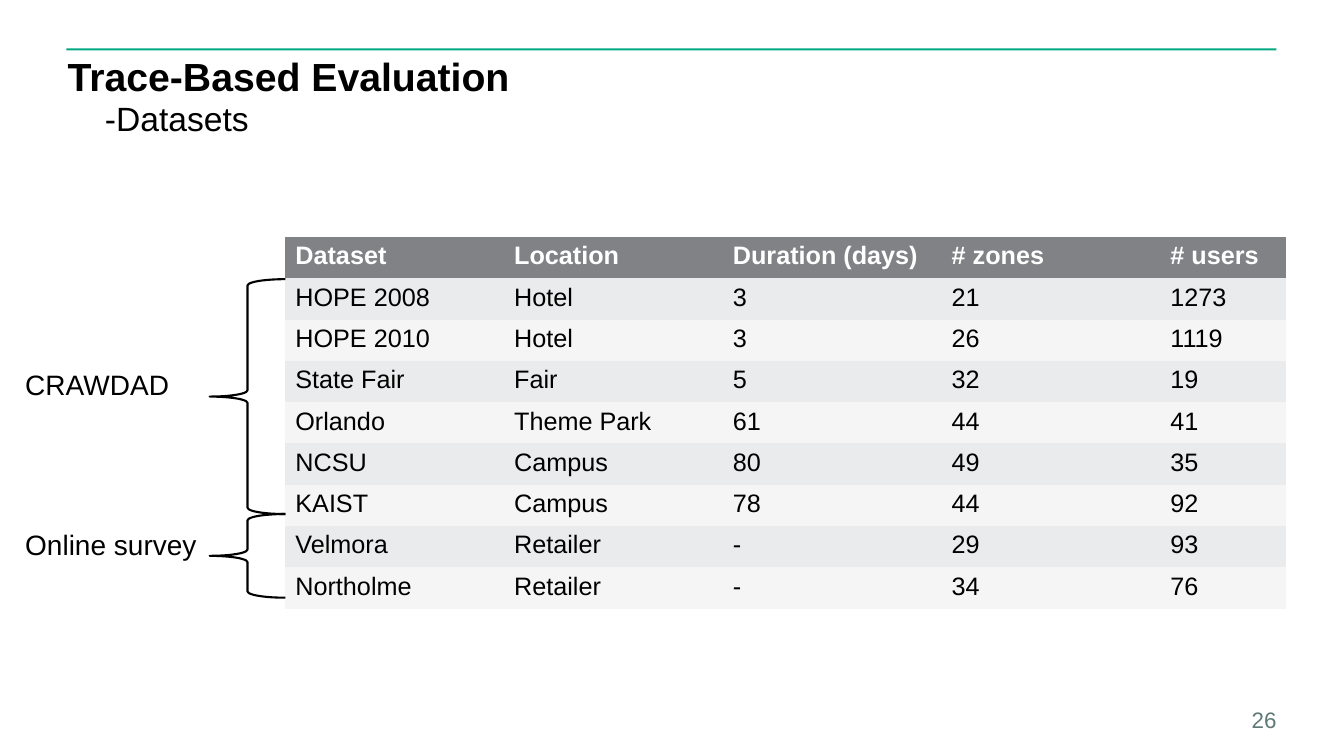
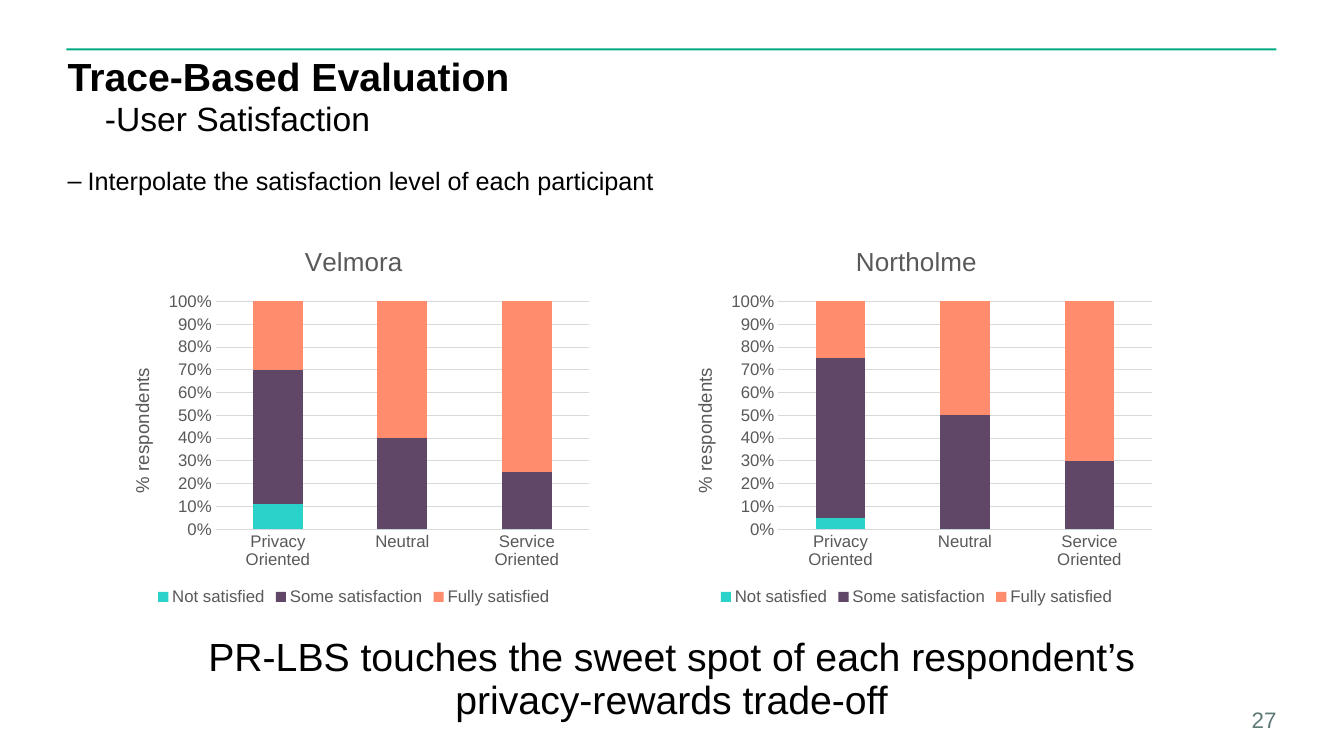
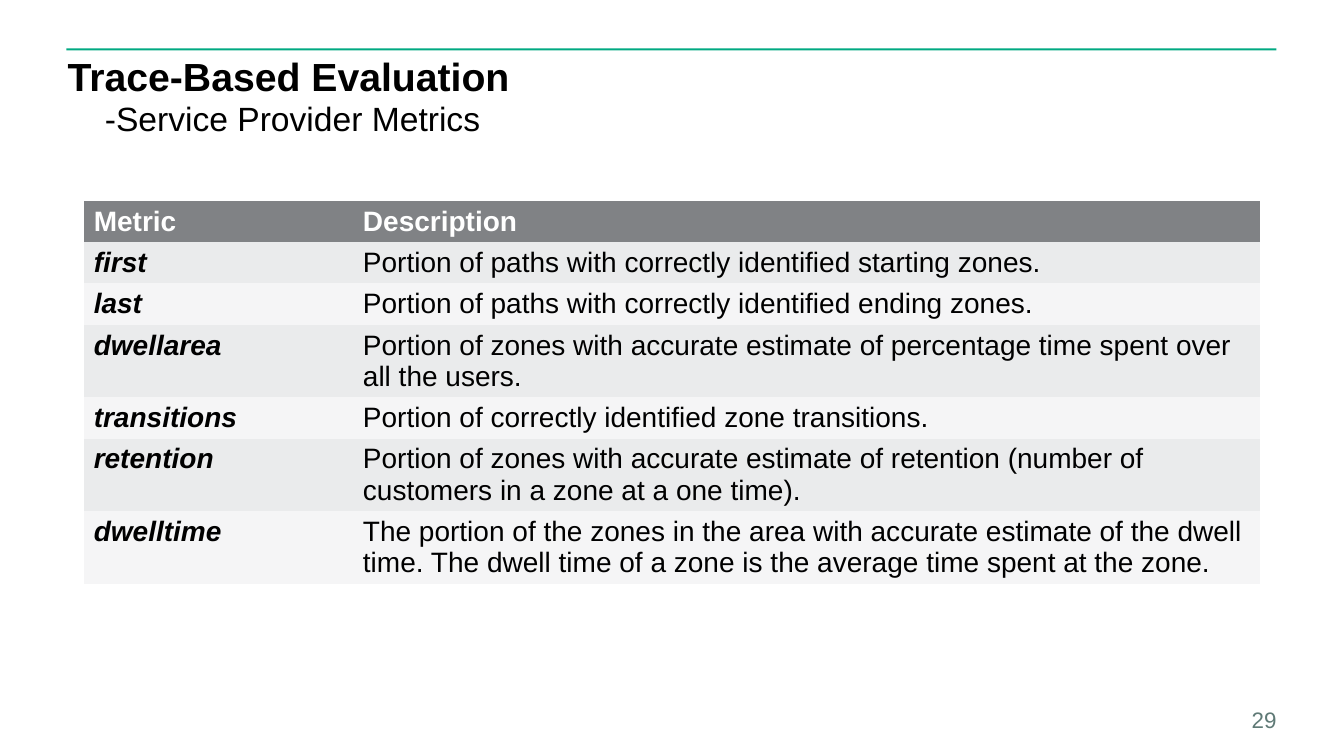
from dataclasses import dataclass

from lxml.etree import SubElement
from pptx import Presentation
from pptx.chart.data import CategoryChartData
from pptx.dml.color import RGBColor
from pptx.enum.chart import XL_CHART_TYPE, XL_LEGEND_POSITION, XL_TICK_MARK
from pptx.enum.shapes import MSO_SHAPE
from pptx.enum.text import MSO_ANCHOR, MSO_AUTO_SIZE, PP_ALIGN
from pptx.oxml.ns import qn
from pptx.util import Inches, Pt


@dataclass(frozen=True)
class Theme:
    font: str = "Arial"
    # Colours
    text: str = "000000"
    inverse: str = "FFFFFF"
    accent: str = "01A982"
    number: str = "5F7A76"
    header: str = "808285"
    bands: tuple = ("EAEBEC", "F5F5F6")
    chart_text: str = "595959"
    grid: str = "D9D9D9"
    series: tuple = ("2AD2C9", "614767", "FF8D6D")
    # Type sizes
    title_size: float = 28
    subtitle_size: float = 24
    label_size: float = 20
    body_size: float = 18
    number_size: float = 16
    chart_title_size: float = 18.6
    axis_title_size: float = 13.3
    chart_size: float = 12


THEME = Theme()
NO_TABLE_STYLE = "{2D5ABB26-0587-4C30-8999-92F81FD0307C}"
SATISFACTION = ("Not satisfied", "Some satisfaction", "Fully satisfied")
ORIENTATIONS = ("Privacy Oriented", "Neutral", "Service Oriented")


# Shared helpers
def rgb(color):
    return RGBColor.from_string(color)


def inches(box):
    return [Inches(v) for v in box]


def style_font(font, size, color, bold=False, italic=False):
    font.name, font.size = THEME.font, Pt(size)
    font.bold, font.italic = bold, italic
    font.color.rgb = rgb(color)


def write(tf, text, size=THEME.body_size, color=THEME.text, bold=False,
          italic=False, align=PP_ALIGN.LEFT, spacing=0.9, before=0,
          bullet=None, margin=0, hanging=0):
    p = tf.paragraphs[0]
    p.alignment, p.line_spacing, p.space_before = align, spacing, Pt(before)
    pPr = p._p.get_or_add_pPr()
    pPr.set("marL", str(Inches(margin)))
    pPr.set("indent", str(-Inches(hanging)))
    if bullet:
        SubElement(pPr, qn("a:buChar")).set("char", bullet)
    else:
        SubElement(pPr, qn("a:buNone"))
    r = p.add_run()
    r.text = text
    style_font(r.font, size, color, bold, italic)


def place_text(sp, box, text, anchor=MSO_ANCHOR.TOP, **fmt):
    sp.left, sp.top, sp.width, sp.height = inches(box)
    tf = sp.text_frame
    tf.word_wrap, tf.auto_size = True, MSO_AUTO_SIZE.NONE
    tf.vertical_anchor = anchor
    tf.margin_left = tf.margin_right = tf.margin_top = tf.margin_bottom = 0
    write(tf, text, **fmt)


def add_text(slide, box, text, **fmt):
    place_text(slide.shapes.add_textbox(*inches(box)), box, text, **fmt)


# Frame common to all slides: rule, title, subtitle, page number
def add_slide(prs, layout, subtitle, number):
    slide = prs.slides.add_slide(prs.slide_layouts.get_by_name(layout))
    rule = slide.shapes.add_shape(MSO_SHAPE.RECTANGLE, *inches((0.66, 0.48, 12, 0.02)))
    rule.shadow.inherit = False
    rule.fill.solid()
    rule.fill.fore_color.rgb = rgb(THEME.accent)
    rule.line.fill.background()
    place_text(slide.shapes.title, (0.67, 0.57, 12, 0.45), "Trace-Based Evaluation",
               size=THEME.title_size, bold=True)
    place_text(slide.placeholders[1], (0.67, 1.02, 12, 0.42), subtitle,
               size=THEME.subtitle_size, margin=0.37)
    add_text(slide, (12.08, 7.03, 0.58, 0.25), str(number), size=THEME.number_size,
             color=THEME.number, align=PP_ALIGN.RIGHT, anchor=MSO_ANCHOR.BOTTOM)
    return slide


def add_banded_table(slide, left, top, widths, rows, size, row_height=0.41,
                     emphasize_first=False):
    box = (left, top, sum(widths), row_height * len(rows))
    frame = slide.shapes.add_table(len(rows), len(widths), *inches(box))
    table = frame.table
    table._tbl.tblPr.find(qn("a:tableStyleId")).text = NO_TABLE_STYLE
    for column, width in zip(table.columns, widths):
        column.width = Inches(width)
    for i, row in enumerate(rows):
        is_header = i == 0
        for j, text in enumerate(row):
            cell = table.cell(i, j)
            cell.fill.solid()
            cell.fill.fore_color.rgb = rgb(
                THEME.header if is_header else THEME.bands[(i - 1) % 2])
            key = emphasize_first and j == 0 and not is_header
            write(cell.text_frame, text, size=size, spacing=1.0,
                  color=THEME.inverse if is_header else THEME.text,
                  bold=is_header or key, italic=key)


def add_source_group(slide, top, height, label, label_top):
    brace = slide.shapes.add_shape(MSO_SHAPE.LEFT_BRACE, *inches((2.08, top, 0.75, height)))
    brace.shadow.inherit = False
    brace.fill.background()
    brace.line.color.rgb = rgb(THEME.text)
    brace.line.width = Pt(1.5)
    add_text(slide, (0.25, label_top, 1.83, 0.5), label, size=THEME.label_size)


def set_chart_title(tf, text, size):
    tf.text = text
    style_font(tf.paragraphs[0].runs[0].font, size, THEME.chart_text)


def add_satisfaction_chart(slide, box, title, values):
    data = CategoryChartData()
    data.categories = ORIENTATIONS
    for name, vals in zip(SATISFACTION, values):
        data.add_series(name, vals)
    chart = slide.shapes.add_chart(
        XL_CHART_TYPE.COLUMN_STACKED_100, *inches(box), data).chart
    style_font(chart.font, THEME.chart_size, THEME.chart_text)
    chart.has_title = True
    set_chart_title(chart.chart_title.text_frame, title, THEME.chart_title_size)
    chart.chart_title.include_in_layout = False

    # Columns
    plot = chart.plots[0]
    plot.gap_width, plot.overlap, plot.vary_by_categories = 150, 100, False
    for series, color in zip(plot.series, THEME.series):
        series.format.fill.solid()
        series.format.fill.fore_color.rgb = rgb(color)

    # Axes
    cat, val = chart.category_axis, chart.value_axis
    for axis in (cat, val):
        axis.major_tick_mark = axis.minor_tick_mark = XL_TICK_MARK.NONE
        style_font(axis.tick_labels.font, THEME.chart_size, THEME.chart_text)
    val.tick_labels.number_format = "0%"
    val.tick_labels.number_format_is_linked = False
    val.format.line.fill.background()
    val.has_major_gridlines = True
    for line in (cat.format.line, val.major_gridlines.format.line):
        line.color.rgb = rgb(THEME.grid)
        line.width = Pt(0.75)
    val.has_title = True
    set_chart_title(val.axis_title.text_frame, "% respondents", THEME.axis_title_size)

    # Legend
    chart.has_legend = True
    chart.legend.position = XL_LEGEND_POSITION.BOTTOM
    chart.legend.include_in_layout = False
    style_font(chart.legend.font, THEME.chart_size, THEME.chart_text)


# Slides
def datasets_slide(prs):
    slide = add_slide(prs, "Title and Content", "-Datasets", 26)
    rows = (
        ("Dataset", "Location", "Duration (days)", "# zones", "# users"),
        ("HOPE 2008", "Hotel", "3", "21", "1273"),
        ("HOPE 2010", "Hotel", "3", "26", "1119"),
        ("State Fair", "Fair", "5", "32", "19"),
        ("Orlando", "Theme Park", "61", "44", "41"),
        ("NCSU", "Campus", "80", "49", "35"),
        ("KAIST", "Campus", "78", "44", "92"),
        ("Velmora", "Retailer", "-", "29", "93"),
        ("Northolme", "Retailer", "-", "34", "76"),
    )
    add_banded_table(slide, 2.83, 2.35, (2.17,) * 4 + (1.25,), rows, THEME.body_size)
    add_source_group(slide, 2.77, 2.33, "CRAWDAD", 3.68)
    add_source_group(slide, 5.1, 0.83, "Online survey", 5.27)


def satisfaction_slide(prs):
    slide = add_slide(prs, "Two Content", "-User Satisfaction", 27)
    place_text(slide.placeholders[2], (0.67, 1.67, 12, 0.5),
               "Interpolate the satisfaction level of each participant",
               bullet="–", margin=0.2, hanging=0.2, before=12)
    charts = (
        ("Velmora", ((11, 0, 0), (59, 40, 25), (30, 60, 75))),
        ("Northolme", ((5, 0, 0), (70, 50, 30), (25, 50, 70))),
    )
    for i, (retailer, values) in enumerate(charts):
        add_satisfaction_chart(slide, (1.08 + 5.58 * i, 2.25, 4.86, 3.8), retailer, values)
    add_text(slide, (1.37, 6.33, 10.58, 0.67),
             "PR-LBS touches the sweet spot of each respondent’s privacy-rewards trade-off",
             size=THEME.title_size, align=PP_ALIGN.CENTER)


def metrics_slide(prs):
    slide = add_slide(prs, "Title and Content", "-Service Provider Metrics", 29)
    rows = (
        ("Metric", "Description"),
        ("first", "Portion of paths with correctly identified starting zones."),
        ("last", "Portion of paths with correctly identified ending zones."),
        ("dwellarea", "Portion of zones with accurate estimate of percentage time "
                      "spent over all the users."),
        ("transitions", "Portion of correctly identified zone transitions."),
        ("retention", "Portion of zones with accurate estimate of retention (number of "
                      "customers in a zone at a one time)."),
        ("dwelltime", "The portion of the zones in the area with accurate estimate of the "
                      "dwell time. The dwell time of a zone is the average time spent at "
                      "the zone."),
    )
    add_banded_table(slide, 0.83, 1.99, (2.67, 9), rows, THEME.label_size,
                     emphasize_first=True)


def main():
    prs = Presentation()
    prs.slide_width, prs.slide_height = Inches(13.33), Inches(7.5)
    datasets_slide(prs)
    satisfaction_slide(prs)
    metrics_slide(prs)
    prs.save("out.pptx")


if __name__ == "__main__":
    main()
